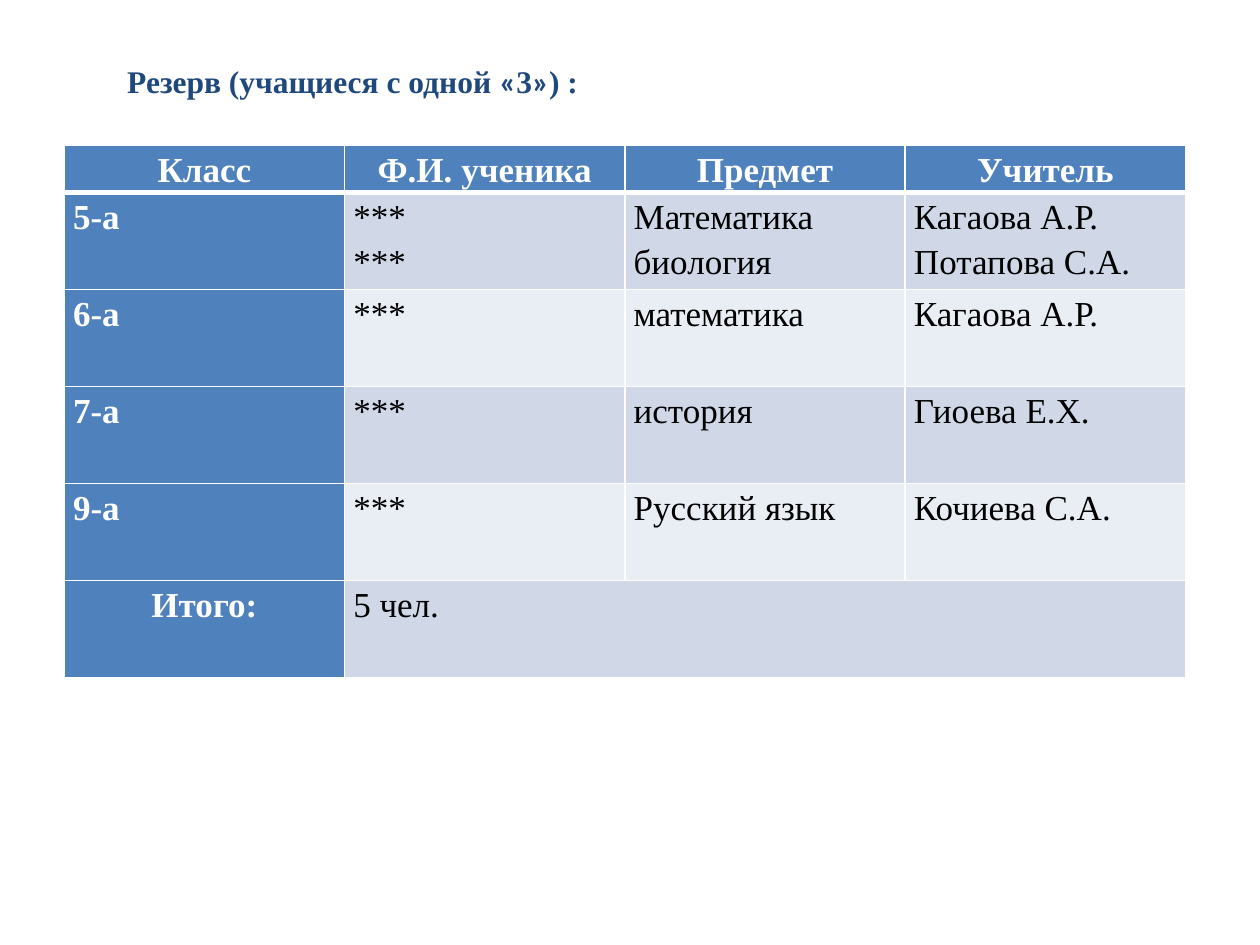
from dataclasses import dataclass
from itertools import groupby

from lxml.etree import SubElement
from pptx import Presentation
from pptx.dml.color import RGBColor
from pptx.enum.text import MSO_ANCHOR, PP_ALIGN
from pptx.oxml.ns import qn
from pptx.util import Inches, Pt


@dataclass(frozen=True)
class Theme:
    font: str = "Times New Roman"
    quote: str = "Calibri"
    title: str = "1F497D"
    head: str = "4F81BD"
    odd: str = "D0D8E8"
    even: str = "E9EDF4"
    white: str = "FFFFFF"
    black: str = "000000"
    big: int = 20
    small: int = 18


@dataclass(frozen=True)
class Row:
    label: str
    cells: tuple[str, ...]
    mid: bool = False


THEME = Theme()
HEAD = Row("Класс", ("Ф.И. ученика", "Предмет", "Учитель"), True)
ROWS = (
    Row("5-а", ("***\n***", "Математика\nбиология", "Кагаова А.Р.\nПотапова С.А.")),
    Row("6-а", ("***", "математика", "Кагаова А.Р.")),
    Row("7-а", ("***", "история", "Гиоева Е.Х.")),
    Row("9-а", ("***", "Русский язык", "Кочиева С.А.")),
    Row("Итого:", ("5 чел.",), True),
)


def write(frame, text: str, *, size: int, color: str, bold: bool = False,
          mid: bool = False, space: float = 1.0) -> None:
    for i, line in enumerate(text.split("\n")):
        para = frame.add_paragraph() if i else frame.paragraphs[0]
        para.alignment = PP_ALIGN.CENTER if mid else PP_ALIGN.LEFT
        para.line_spacing = space
        for quote, chars in groupby(line, key=lambda c: c in "«»"):
            run = para.add_run()
            run.text = "".join(chars)
            run.font.name = THEME.quote if quote else THEME.font
            run.font.size = Pt(size)
            run.font.bold = bold
            run.font.color.rgb = RGBColor.from_string(color)


def edge(cell, base: float) -> None:
    props = cell._tc.get_or_add_tcPr()
    for side in "LRTB":
        width = base if side == "B" else 1
        line = SubElement(props, qn(f"a:ln{side}"), w=str(Pt(width)))
        fill = SubElement(line, qn("a:solidFill"))
        SubElement(fill, qn("a:srgbClr"), val=THEME.white)


def paint(cell, text: str, fill: str, *, strong: bool, mid: bool, base: float) -> None:
    edge(cell, base)
    cell.fill.solid()
    cell.fill.fore_color.rgb = RGBColor.from_string(fill)
    cell.margin_left = cell.margin_right = Inches(0.07)
    cell.margin_top = cell.margin_bottom = 0
    write(cell.text_frame, text, size=THEME.big, bold=strong, mid=mid, space=1.15,
          color=THEME.white if strong else THEME.black)


def grid(slide) -> None:
    rows = (HEAD, *ROWS)
    cols = len(HEAD.cells) + 1
    table = slide.shapes.add_table(
        len(rows), cols, Inches(0.51), Inches(1.15), Inches(8.9), Inches(4.22)).table
    for r, row in enumerate(rows):
        top = r == 0
        table.rows[r].height = Inches(0.38 if top else 0.77)
        band = THEME.head if top else THEME.odd if r % 2 else THEME.even
        texts = (row.label, *row.cells)
        if len(texts) < cols:
            table.cell(r, len(texts) - 1).merge(table.cell(r, cols - 1))
        for c, text in enumerate(texts):
            first = c == 0
            paint(table.cell(r, c), text, THEME.head if first else band,
                  strong=top or first, mid=row.mid and (top or first),
                  base=3 if top else 1)


def main() -> None:
    deck = Presentation()
    deck.slide_width, deck.slide_height = Inches(10), Inches(7.5)
    slide = deck.slides.add_slide(deck.slide_layouts[5])
    title = slide.shapes.title
    title.left, title.top = Inches(0.91), Inches(0.44)
    title.width, title.height = Inches(3.88), Inches(0.4)
    title.text_frame.word_wrap = False
    title.text_frame.vertical_anchor = MSO_ANCHOR.TOP
    write(title.text_frame, "Резерв (учащиеся с одной «3») :",
          size=THEME.small, color=THEME.title, bold=True)
    grid(slide)
    deck.save("out.pptx")


if __name__ == "__main__":
    main()
